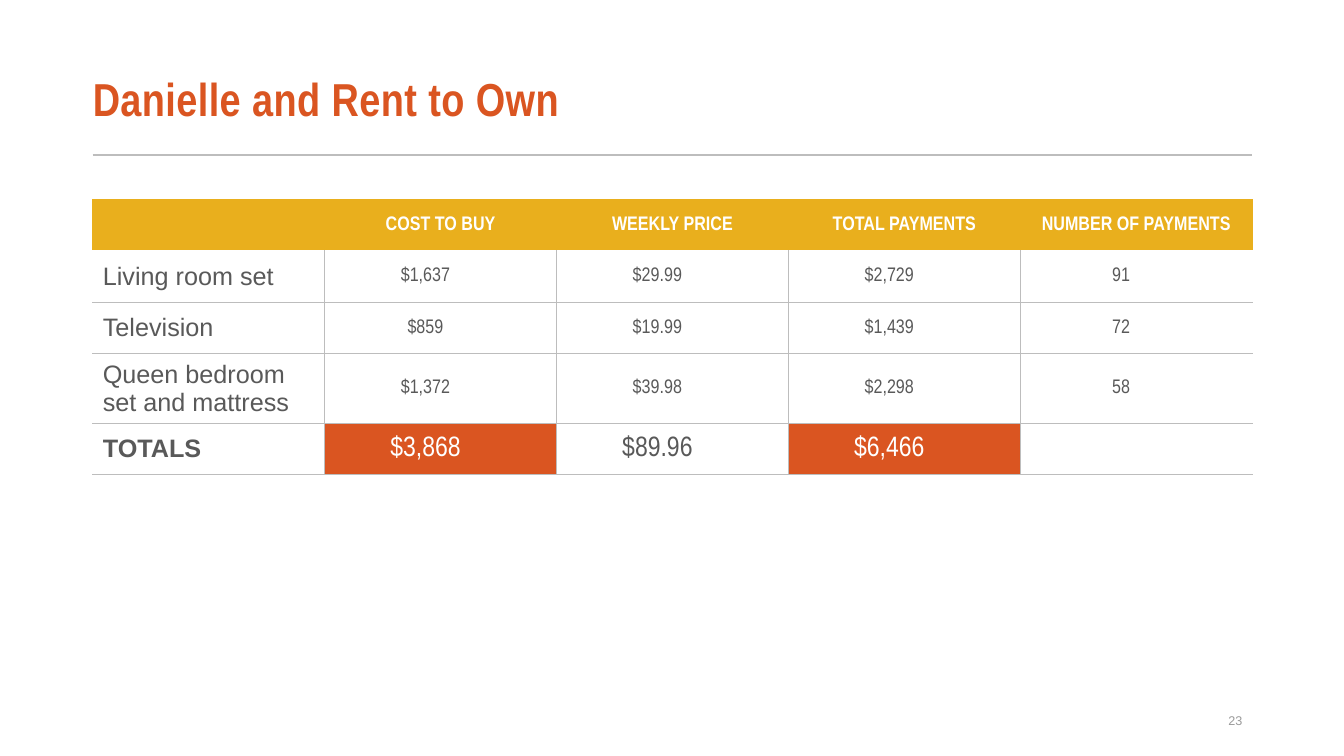
from dataclasses import dataclass

from lxml.etree import SubElement
from pptx import Presentation
from pptx.dml.color import RGBColor
from pptx.enum.shapes import MSO_CONNECTOR as Connector
from pptx.enum.text import MSO_ANCHOR as Anchor, PP_ALIGN as Align
from pptx.oxml.ns import qn
from pptx.util import Inches, Pt


@dataclass(frozen=True)
class Theme:
    orange: str = "DA5521"
    gold: str = "E9AF1D"
    white: str = "FFFFFF"
    text: str = "595959"
    rule: str = "BDBDBD"
    muted: str = "9A9A9A"
    body_font: str = "Arial"
    narrow_font: str = "Arial Narrow"
    title_size: float = 33
    total_size: float = 20
    label_size: float = 18
    figure_size: float = 14
    number_size: float = 9


THEME = Theme()
LEFT, WIDTH = 0.92, 11.5
ROW_HEIGHTS = (0.51, 0.51, 0.51, 0.69, 0.51)
ROWS = (
    ("", "COST TO BUY", "WEEKLY PRICE", "TOTAL PAYMENTS", "NUMBER OF PAYMENTS"),
    ("Living room set", "$1,637", "$29.99", "$2,729", "91"),
    ("Television", "$859", "$19.99", "$1,439", "72"),
    ("Queen bedroom set and mattress", "$1,372", "$39.98", "$2,298", "58"),
    ("TOTALS", "$3,868", "$89.96", "$6,466", ""),
)
HIGHLIGHTED_TOTALS = (1, 3)


def write_text(frame, text, *, size, color=THEME.text, font=THEME.body_font,
               bold=False, align=Align.LEFT, line_spacing=None, tracking=None):
    """Write one formatted paragraph into a text frame."""
    paragraph = frame.paragraphs[0]
    paragraph.alignment = align
    if line_spacing:
        paragraph.line_spacing = line_spacing
    run = paragraph.add_run()
    run.text = text
    run.font.name = font
    run.font.size = Pt(size)
    run.font.bold = bold
    run.font.color.rgb = RGBColor.from_string(color)
    if tracking:
        run.font._element.set("spc", str(round(tracking * 100)))


def add_title(slide, text):
    title = slide.shapes.title
    title.left, title.top = Inches(LEFT), Inches(0.54)
    title.width, title.height = Inches(WIDTH), Inches(0.94)
    frame = title.text_frame
    frame.word_wrap = True
    frame.vertical_anchor = Anchor.MIDDLE
    frame.margin_left = 0
    write_text(frame, text, size=THEME.title_size, color=THEME.orange,
               font=THEME.narrow_font, bold=True, line_spacing=0.87, tracking=0.3)


def add_rule(slide, top):
    line = slide.shapes.add_connector(
        Connector.STRAIGHT, Inches(LEFT), Inches(top), Inches(LEFT + WIDTH), Inches(top))
    line.line.color.rgb = RGBColor.from_string(THEME.rule)
    line.line.width = Pt(1.5)
    SubElement(line._element.spPr, qn("a:effectLst"))


def add_slide_number(slide, number):
    box = slide.shapes.add_textbox(Inches(9.42), Inches(6.95), Inches(3), Inches(0.4))
    box.text_frame.word_wrap = True
    box.text_frame.vertical_anchor = Anchor.MIDDLE
    write_text(box.text_frame, number, size=THEME.number_size,
               color=THEME.muted, align=Align.RIGHT)


def set_borders(cell, **sides):
    """Draw L, R, T and B borders, each given as (colour, points)."""
    properties = cell._tc.get_or_add_tcPr()
    for side in "LRTB":
        color, points = sides[side]
        line = SubElement(properties, qn(f"a:ln{side}"), w=str(Pt(points)))
        fill = SubElement(line, qn("a:solidFill"))
        SubElement(fill, qn("a:srgbClr"), val=color)


def cell_borders(row, column):
    last_column = len(ROWS[0]) - 1
    if row == 0:
        edge = (THEME.gold, 0.5)
        return {"L": edge, "R": edge, "T": edge, "B": (THEME.white, 1)}
    rule, blank = (THEME.rule, 1), (THEME.white, 1)
    return {
        "L": blank if column == 0 else rule,
        "R": blank if column == last_column else rule,
        "T": blank if row == 1 else rule,
        "B": rule,
    }


def format_cell(cell, text, row, column):
    is_header, is_total = row == 0, row == len(ROWS) - 1
    highlighted = is_total and column in HIGHLIGHTED_TOTALS
    cell.vertical_anchor = Anchor.MIDDLE
    set_borders(cell, **cell_borders(row, column))
    if is_header or highlighted:
        cell.fill.solid()
        cell.fill.fore_color.rgb = RGBColor.from_string(
            THEME.gold if is_header else THEME.orange)
    else:
        cell.fill.background()
    if not text:
        return
    if column == 0:
        write_text(cell.text_frame, text, size=THEME.label_size, bold=is_total)
        return
    if not is_header:
        cell.margin_right = Inches(0.4)
    write_text(cell.text_frame, text, font=THEME.narrow_font, align=Align.CENTER,
               size=THEME.total_size if is_total else THEME.figure_size,
               color=THEME.white if is_header or highlighted else THEME.text,
               bold=is_header)


def add_cost_table(slide):
    column_count = len(ROWS[0])
    table = slide.shapes.add_table(
        len(ROWS), column_count, Inches(LEFT), Inches(1.98),
        Inches(WIDTH), Inches(sum(ROW_HEIGHTS))).table
    table.horz_banding = False
    for column in table.columns:
        column.width = Inches(WIDTH / column_count)
    for row, (texts, height) in enumerate(zip(ROWS, ROW_HEIGHTS)):
        table.rows[row].height = Inches(height)
        for column, text in enumerate(texts):
            format_cell(table.cell(row, column), text, row, column)


def main():
    presentation = Presentation()
    presentation.slide_width, presentation.slide_height = Inches(13.33), Inches(7.5)
    slide = presentation.slides.add_slide(presentation.slide_layouts[5])

    # Heading
    add_title(slide, "Danielle and Rent to Own")
    add_rule(slide, 1.54)

    # Cost comparison
    add_cost_table(slide)

    # Footer
    add_slide_number(slide, "23")
    presentation.save("out.pptx")


if __name__ == "__main__":
    main()
